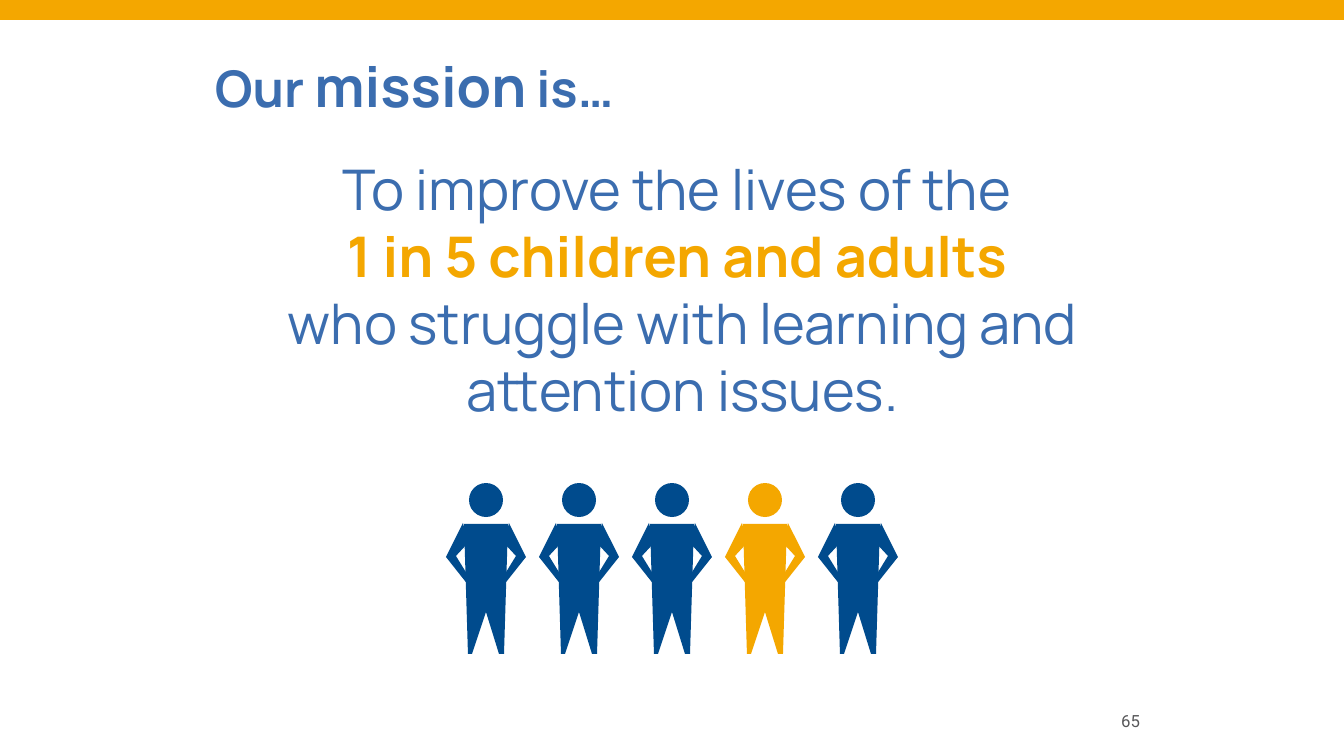
from pptx import Presentation
from pptx.dml.color import RGBColor
from pptx.enum import shapes, text
from pptx.util import Pt

PX = 914400 / 100.8
SLIDE_W, SLIDE_H = 1344, 756
BLUE, NAVY, GOLD, GREY = "3B6DAF", "004B8D", "F4A700", "58585A"
LEFT, CENTER, RIGHT = text.PP_ALIGN.LEFT, text.PP_ALIGN.CENTER, text.PP_ALIGN.RIGHT
TOP, MIDDLE = text.MSO_ANCHOR.TOP, text.MSO_ANCHOR.MIDDLE

# Text boxes: box, insets (left, top, right, bottom), alignment, anchor, font,
# paragraphs of runs (text, size, colour, bold)
TEXTS = [
    ((185, 144, 975, 151), (30, 10, 10, 5), CENTER, TOP, "Manrope", [
        [("To improve the lives of the ", 40, BLUE, False)],
        [("1 in 5 children and adults ", 40, GOLD, True)],
        [("who struggle with learning and attention issues.", 40, BLUE, False)],
    ]),
    ((185, 42, 975, 151), (30, 10, 10, 5), LEFT, TOP, "Manrope", [
        [("Our ", 36, BLUE, True), ("mission", 40, BLUE, True), (" is…", 36, BLUE, True)],
    ]),
    ((915, 701, 235, 40), (10, 5, 10, 5), RIGHT, MIDDLE, "Roboto", [
        [("65", 12, GREY, False)],
    ]),
]

# People: x is measured from each person's centre line
PEOPLE = [NAVY, NAVY, NAVY, GOLD, NAVY]
PITCH = 93
HEAD_TOP, HEAD_SIZE = 483, 34
BODY = [(-22, 524), (22, 524), (18, 654), (13, 654), (0, 612), (-14, 654), (-18, 654)]
LEFT_ARM = [(-17, 586), (-40, 557), (-23, 523), (-18, 543), (-30, 556), (-14, 582)]
RIGHT_ARM = [(-x, y) for x, y in LEFT_ARM]


def px(*lengths):
    return [round(n * PX) for n in lengths]


def paint(sp, colour):
    sp.shadow.inherit = False
    sp.fill.solid()
    sp.fill.fore_color.rgb = RGBColor.from_string(colour)
    sp.line.fill.background()


def add_preset(parent, kind, box, colour):
    paint(parent.add_shape(kind, *px(*box)), colour)


def add_outline(parent, centre, points, colour):
    corners = [(centre + x, y) for x, y in points]
    builder = parent.build_freeform(*corners[0], scale=PX)
    builder.add_line_segments(corners[1:], close=True)
    paint(builder.convert_to_shape(), colour)


def add_person(slide, centre, colour):
    person = slide.shapes.add_group_shape().shapes
    head = (centre - HEAD_SIZE / 2, HEAD_TOP, HEAD_SIZE, HEAD_SIZE)
    add_preset(person, shapes.MSO_SHAPE.OVAL, head, colour)
    for points in (BODY, LEFT_ARM, RIGHT_ARM):
        add_outline(person, centre, points, colour)


def add_text(slide, box, insets, align, anchor, font, paragraphs):
    tf = slide.shapes.add_textbox(*px(*box)).text_frame
    tf.word_wrap = True
    tf.vertical_anchor = anchor
    tf.margin_left, tf.margin_top, tf.margin_right, tf.margin_bottom = px(*insets)
    for i, runs in enumerate(paragraphs):
        p = tf.add_paragraph() if i else tf.paragraphs[0]
        p.alignment = align
        for words, size, colour, bold in runs:
            r = p.add_run()
            r.text = words
            r.font.name, r.font.size, r.font.bold = font, Pt(size), bold
            r.font.color.rgb = RGBColor.from_string(colour)


def main():
    prs = Presentation()
    prs.slide_width, prs.slide_height = px(SLIDE_W, SLIDE_H)
    slide = prs.slides.add_slide(prs.slide_layouts[6])
    add_preset(slide.shapes, shapes.MSO_SHAPE.RECTANGLE, (0, 0, SLIDE_W, 20), GOLD)
    for entry in TEXTS:
        add_text(slide, *entry)
    first = SLIDE_W // 2 - PITCH * (len(PEOPLE) - 1) // 2
    for i, colour in enumerate(PEOPLE):
        add_person(slide, first + i * PITCH, colour)
    prs.save("out.pptx")


if __name__ == "__main__":
    main()
